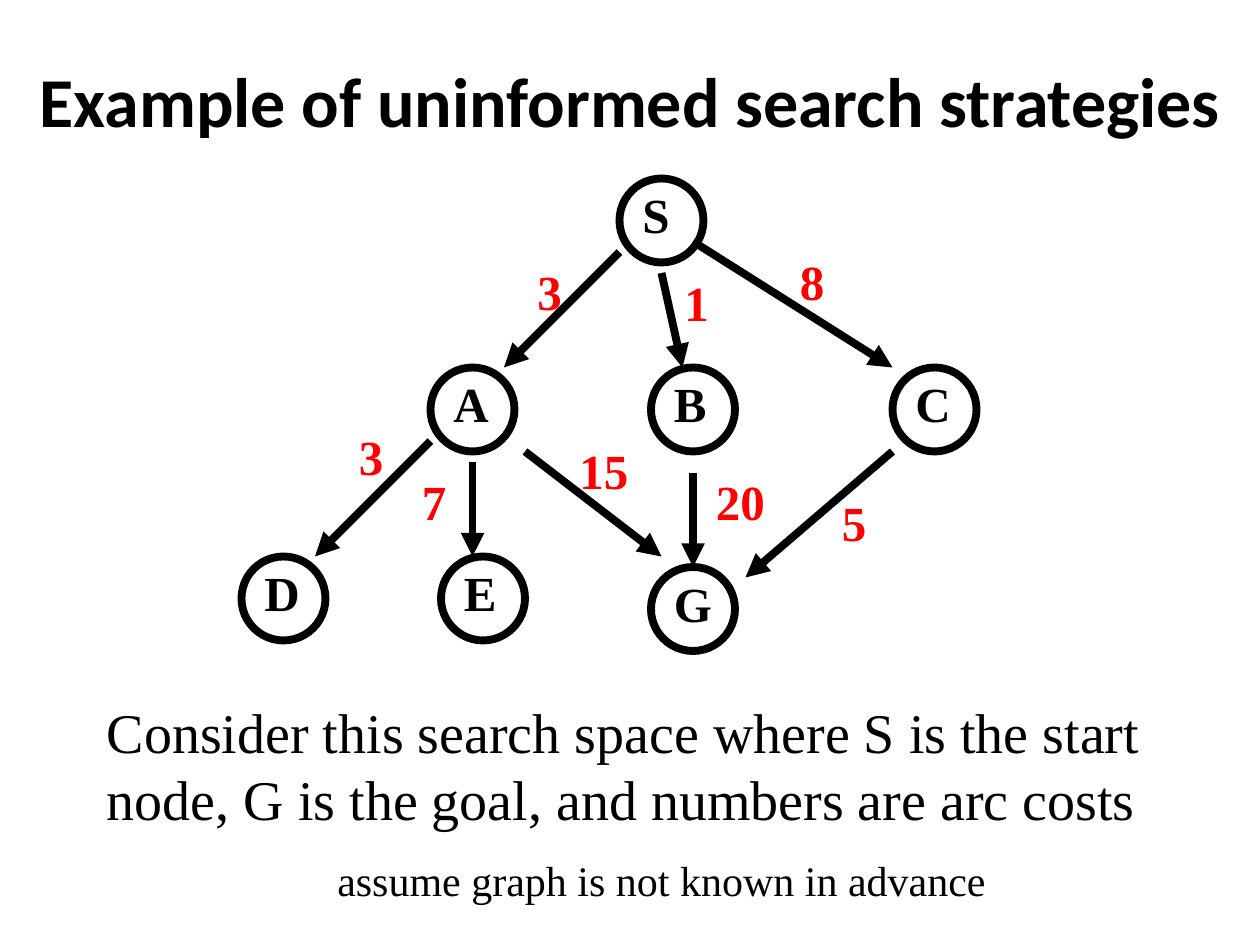
from lxml import etree
from pptx import Presentation
from pptx.dml.color import RGBColor
from pptx.enum.shapes import MSO_CONNECTOR, MSO_SHAPE
from pptx.enum.text import MSO_ANCHOR, MSO_AUTO_SIZE, PP_ALIGN
from pptx.oxml.ns import qn
from pptx.util import Pt

OVAL = MSO_SHAPE.OVAL
LINE = MSO_CONNECTOR.STRAIGHT
LEFT, CENTER = PP_ALIGN.LEFT, PP_ALIGN.CENTER
TOP, MIDDLE = MSO_ANCHOR.TOP, MSO_ANCHOR.MIDDLE
FIT, FIXED = MSO_AUTO_SIZE.SHAPE_TO_FIT_TEXT, MSO_AUTO_SIZE.NONE
SERIF, SANS = "Times New Roman", "Calibri"
BLACK, RED = "000000", "FF0000"
SIZE, INSET, STROKE, HIGH = 48, 6, 4.5, 41

TITLE = "Example of uninformed search strategies"
BODY = ("Consider this search space where S is the start node, "
        "G is the goal, and numbers are arc costs")
NOTE = "assume graph is not known in advance"

NODES = [
    ("S", 354, 102, 30),
    ("C", 510, 210, 34.5),
    ("B", 372, 210, 33),
    ("A", 246, 210, 34.5),
    ("D", 138, 318, 34.5),
    ("G", 372, 324, 36),
    ("E", 252, 318, 33),
]
ARCS = [
    ((354, 144), (288, 210)),
    ((270, 264), (270, 318)),
    ((300, 258), (378, 318)),
    ((378, 156), (390, 210)),
    ((396, 138), (510, 210)),
    ((396, 270), (396, 324)),
    ((510, 258), (426, 330)),
    ((246, 252), (180, 318)),
]
COSTS = [
    ("3", 300, 146),
    ("1", 384, 152),
    ("8", 450, 140),
    ("15", 324, 248),
    ("20", 402, 266),
    ("5", 474, 278),
    ("3", 198, 240),
    ("7", 234, 266),
]


def color(code):
    return RGBColor.from_string(code)


def add_text(text, x, y, w, h, size, font=SERIF, tint=BLACK, bold=False,
             align=LEFT, anchor=TOP, wrap=True, fit=FIT):
    box = slide.shapes.add_textbox(Pt(x), Pt(y), Pt(w), Pt(h))
    frame = box.text_frame
    frame.word_wrap = wrap
    frame.auto_size = fit
    frame.vertical_anchor = anchor
    para = frame.paragraphs[0]
    para.alignment = align
    run = para.add_run()
    run.text = text
    run.font.name = font
    run.font.size = Pt(size)
    run.font.bold = bold
    run.font.color.rgb = color(tint)


def add_label(text, x, y, w, tint):
    add_text(text, x, y, w, HIGH, 28, tint=tint, bold=True, wrap=False)


def add_node(name, x, y, w):
    ring = slide.shapes.add_shape(OVAL, Pt(x), Pt(y), Pt(SIZE), Pt(SIZE))
    ring.shadow.inherit = False
    ring.fill.background()
    ring.line.color.rgb = color(BLACK)
    ring.line.width = Pt(STROKE)
    add_label(name, x + INSET, y, w, BLACK)


def add_arc(start, end):
    arc = slide.shapes.add_connector(LINE, *map(Pt, start + end))
    arc.line.color.rgb = color(BLACK)
    arc.line.width = Pt(STROKE)
    props = arc.line._get_or_add_ln()
    etree.SubElement(props, qn("a:tailEnd"), type="triangle")
    etree.SubElement(arc._element.spPr, qn("a:effectLst"))


deck = Presentation()
deck.slide_width, deck.slide_height = Pt(720), Pt(540)
slide = deck.slides.add_slide(deck.slide_layouts[6])

add_text(TITLE, 0, 12, 720, 90, 40, font=SANS, bold=True,
         align=CENTER, anchor=MIDDLE, fit=FIXED)
for node in NODES:
    add_node(*node)
for start, end in ARCS:
    add_arc(start, end)
for cost, x, y in COSTS:
    add_label(cost, x, y, 14.4 + 14 * len(cost), RED)
add_text(BODY, 54, 395, 636, 85, 32)
add_text(NOTE, 60, 484.5, 636, 36, 24, align=CENTER)

deck.save("out.pptx")
